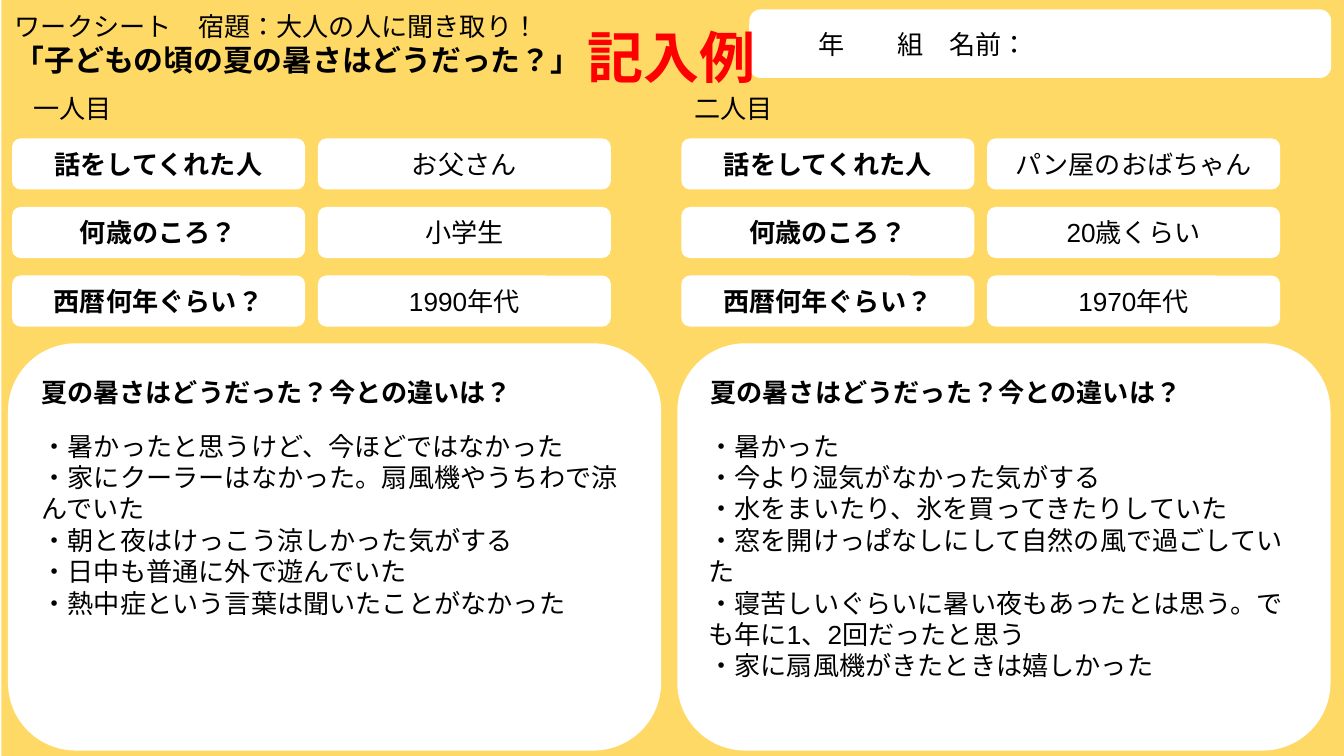
"""Builds a filled-in interview worksheet about summer heat."""
import pptx
import pptx.util
import pptx.dml.color
import pptx.enum.lang
import pptx.enum.shapes
import pptx.enum.text
import pptx.oxml.ns
import lxml.etree

PX = 4572
FONT = "Arial"
SAND = pptx.dml.color.RGBColor(0xFF, 0xD9, 0x66)
WHITE = pptx.dml.color.RGBColor(0xFF, 0xFF, 0xFF)
BLACK = pptx.dml.color.RGBColor(0, 0, 0)
RED = pptx.dml.color.RGBColor(0xFF, 0, 0)
ALIGN = pptx.enum.text.PP_ALIGN
ANCHOR = pptx.enum.text.MSO_ANCHOR
KIND = pptx.enum.shapes.MSO_SHAPE
ASKS = ["話をしてくれた人", "何歳のころ？", "西暦何年ぐらい？"]
HEAT = "夏の暑さはどうだった？今との違いは？"


def sub(node, tag, **attrs):
    """Append a DrawingML child to a node."""
    return lxml.etree.SubElement(node, pptx.oxml.ns.qn(tag), **attrs)


def write(shape, text, size=14, bold=False, color=BLACK, align=ALIGN.LEFT):
    """Add one formatted paragraph to a shape and return it."""
    frame = shape.text_frame
    para = frame.add_paragraph() if frame.text else frame.paragraphs[0]
    para.alignment = align
    para.space_before = pptx.util.Pt(0)
    run = para.add_run()
    run.text = text
    run.font.size = pptx.util.Pt(size)
    run.font.bold = bold
    run.font.color.rgb = color
    run.font.name = FONT
    run.font.language_id = pptx.enum.lang.MSO_LANGUAGE_ID.JAPANESE
    for tag in ("a:ea", "a:cs", "a:sym"):
        sub(run.font._element, tag, typeface=FONT)
    if shape.is_placeholder:
        props = para._p.get_or_add_pPr()
        props.set("marL", "0")
        props.set("indent", "0")
        sub(props, "a:buNone")
    return para


def setup(shape, anchor):
    """Set the margins, wrapping and anchor of a text frame."""
    frame = shape.text_frame
    frame.word_wrap = True
    frame.vertical_anchor = anchor
    frame.margin_left = frame.margin_right = 20 * PX
    frame.margin_top = frame.margin_bottom = 20 * PX


def card(slide, box, fill=WHITE, kind=KIND.ROUNDED_RECTANGLE, anchor=ANCHOR.MIDDLE):
    """Draw a filled shape without outline or shadow."""
    shape = slide.shapes.add_shape(kind, *[n * PX for n in box])
    shape.shadow.inherit = False
    shape.fill.solid()
    shape.fill.fore_color.rgb = fill
    shape.line.fill.background()
    setup(shape, anchor)
    return shape


def label(slide, box, text, **style):
    """Add a text box that grows with its text."""
    shape = slide.shapes.add_textbox(*[n * PX for n in box])
    setup(shape, ANCHOR.TOP)
    shape.text_frame.auto_size = pptx.enum.text.MSO_AUTO_SIZE.SHAPE_TO_FIT_TEXT
    write(shape, text, **style)


def seat(holder, box):
    """Move a placeholder into a box, in front of what is drawn so far."""
    holder.left, holder.top, holder.width, holder.height = [n * PX for n in box]
    setup(holder, ANCHOR.TOP)
    holder.text_frame.auto_size = pptx.enum.text.MSO_AUTO_SIZE.SHAPE_TO_FIT_TEXT
    tree = holder.element.getparent()
    tree.append(holder.element)


def header(slide, left, top):
    """Place the title, name field and sample mark."""
    field = card(slide, (left + 1113, top + 18, 866, 102))
    field.text_frame.margin_left = 98 * PX
    para = write(field, "年\t組　名前：")
    tabs = sub(para._p.get_or_add_pPr(), "a:tabLst")
    sub(tabs, "a:tab", pos=str(117 * PX), algn="l")
    title = slide.shapes.title
    seat(title, (left, top, 1032, 142))
    write(title, "ワークシート　宿題：大人の人に聞き取り！")
    write(title, "「子どもの頃の夏の暑さはどうだった？」", size=16, bold=True)
    label(slide, (left + 754, top + 18, 488, 142), "記入例",
          size=30, bold=True, color=RED, align=ALIGN.CENTER)


def column(slide, holder, box, name, shift, answers, inset, notes, tall):
    """Place one interview: name, answer rows and notes panel."""
    left, top, width, height = box
    label(slide, (left + shift, top, 308, 88), name)
    for i, (ask, answer) in enumerate(zip(ASKS, answers)):
        y = top + 89 + 102 * i
        write(card(slide, (left + 6, y, 436, 76)), ask, bold=True, align=ALIGN.CENTER)
        write(card(slide, (left + 461, y, 436, 76)), answer, align=ALIGN.CENTER)
    panel = card(slide, (left, top + 394, width, height - 394), anchor=ANCHOR.TOP)
    write(panel, HEAT, bold=True)
    seat(holder, (left + inset, top + 503, 904, tall))
    for note in notes:
        write(holder, "・" + note)


def main():
    """Build and save the worksheet."""
    deck = pptx.Presentation()
    deck.slide_width, deck.slide_height = 2000 * PX, 1125 * PX
    slide = deck.slides.add_slide(deck.slide_layouts[3])
    first, second = slide.placeholders[1], slide.placeholders[2]
    card(slide, (2, 0, 2000, 1125), fill=SAND, kind=KIND.RECTANGLE)
    column(slide, first, (12, 117, 972, 1000), "一人目", 18,
           ["お父さん", "小学生", "1990年代"], 30,
           ["暑かったと思うけど、今ほどではなかった",
            "家にクーラーはなかった。扇風機やうちわで涼んでいた",
            "朝と夜はけっこう涼しかった気がする",
            "日中も普通に外で遊んでいた",
            "熱中症という言葉は聞いたことがなかった"], 324)
    column(slide, second, (1008, 117, 972, 1000), "二人目", 6,
           ["パン屋のおばちゃん", "20歳くらい", "1970年代"], 26,
           ["暑かった",
            "今より湿気がなかった気がする",
            "水をまいたり、氷を買ってきたりしていた",
            "窓を開けっぱなしにして自然の風で過ごしていた",
            "寝苦しいぐらいに暑い夜もあったとは思う。でも年に1、2回だったと思う",
            "家に扇風機がきたときは嬉しかった"], 418)
    header(slide, 2, -4)
    deck.save("out.pptx")


if __name__ == "__main__":
    main()
